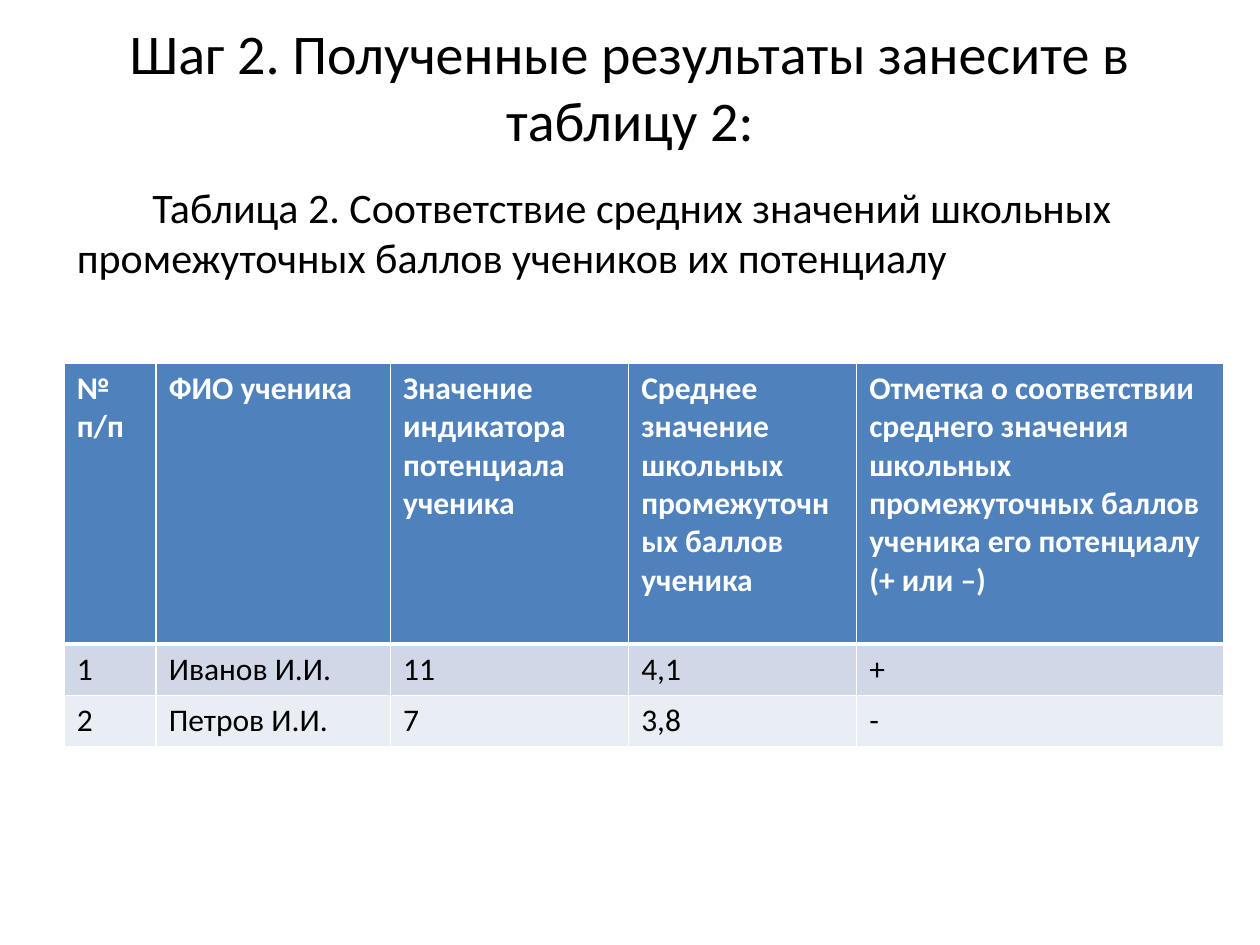
from lxml.etree import SubElement
from pptx import Presentation
from pptx.dml.color import RGBColor
from pptx.enum.text import MSO_ANCHOR, MSO_AUTO_SIZE, PP_ALIGN
from pptx.oxml.ns import qn
from pptx.util import Inches, Pt

COLORS = {"text": "000000", "white": "FFFFFF", "header": "4F81BD",
          "odd": "D0D8E8", "even": "E9EDF4"}
FONT = "Calibri"

COL_WIDTHS = [0.73, 1.86, 1.89, 1.81, 2.91]
ROW_HEIGHTS = [2.23, 0.41, 0.41]
ROWS = [
    ["№ п/п", "ФИО ученика", "Значение индикатора потенциала ученика",
     "Среднее значение школьных промежуточных баллов ученика",
     "Отметка о соответствии среднего значения школьных промежуточных "
     "баллов ученика его потенциалу (+ или –)"],
    ["1", "Иванов И.И.", "11", "4,1", "+"],
    ["2", "Петров И.И.", "7", "3,8", "-"],
]


def rgb(name):
    return RGBColor.from_string(COLORS[name])


def write(tf, text, size=18, color="text", bold=False, align=PP_ALIGN.LEFT):
    p = tf.paragraphs[0]
    p.alignment = align
    r = p.add_run()
    r.text = text
    r.font.name = FONT
    r.font.size = Pt(size)
    r.font.bold = bold
    r.font.color.rgb = rgb(color)
    return p


def place(sp, left, top, width, height, anchor):
    sp.left, sp.top = Inches(left), Inches(top)
    sp.width, sp.height = Inches(width), Inches(height)
    tf = sp.text_frame
    tf.word_wrap = True
    tf.auto_size = MSO_AUTO_SIZE.NONE
    tf.vertical_anchor = anchor
    return tf


def add_title(s, text):
    tf = place(s.shapes.title, 0.5, 0.3, 9, 1.25, MSO_ANCHOR.MIDDLE)
    tf.margin_bottom = Inches(0.54)  # lifts the title above the caption
    write(tf, text, size=32, align=PP_ALIGN.CENTER)


def add_caption(s, text):
    tf = place(s.placeholders[1], 0.51, 1.39, 9, 1.06, MSO_ANCHOR.TOP)
    p = write(tf, text, size=24)
    p.space_before = Pt(0)
    # First-line indent, no bullet
    pPr = p._p.get_or_add_pPr()
    pPr.set("marL", "0")
    pPr.set("indent", str(Inches(0.6)))
    SubElement(pPr, qn("a:buNone"))


def set_borders(cell, top=1, bottom=1):
    tcPr = cell._tc.get_or_add_tcPr()
    for side, width in (("L", 1), ("R", 1), ("T", top), ("B", bottom)):
        ln = SubElement(tcPr, qn(f"a:ln{side}"), w=str(Pt(width)))
        fill = SubElement(ln, qn("a:solidFill"))
        SubElement(fill, qn("a:srgbClr"), val=COLORS["white"])


def add_score_table(s):
    table = s.shapes.add_table(
        len(ROWS), len(COL_WIDTHS), Inches(0.51), Inches(2.88),
        Inches(sum(COL_WIDTHS)), Inches(sum(ROW_HEIGHTS))).table
    for col, width in zip(table.columns, COL_WIDTHS):
        col.width = Inches(width)
    for i, (row, height) in enumerate(zip(table.rows, ROW_HEIGHTS)):
        row.height = Inches(height)
        header = i == 0
        fill = "header" if header else ("odd" if i % 2 else "even")
        for cell, text in zip(row.cells, ROWS[i]):
            # Thick rule between the header and the first pupil
            set_borders(cell, top=3 if i == 1 else 1, bottom=3 if header else 1)
            cell.fill.solid()
            cell.fill.fore_color.rgb = rgb(fill)
            write(cell.text_frame, text, bold=header,
                  color="white" if header else "text")


def main():
    prs = Presentation()
    prs.slide_width, prs.slide_height = Inches(10), Inches(7.5)
    s = prs.slides.add_slide(prs.slide_layouts[1])
    add_title(s, "Шаг 2. Полученные результаты занесите в таблицу 2:")
    add_caption(s, "Таблица 2. Соответствие средних значений школьных "
                   "промежуточных баллов учеников их потенциалу")
    add_score_table(s)
    prs.save("out.pptx")


if __name__ == "__main__":
    main()
